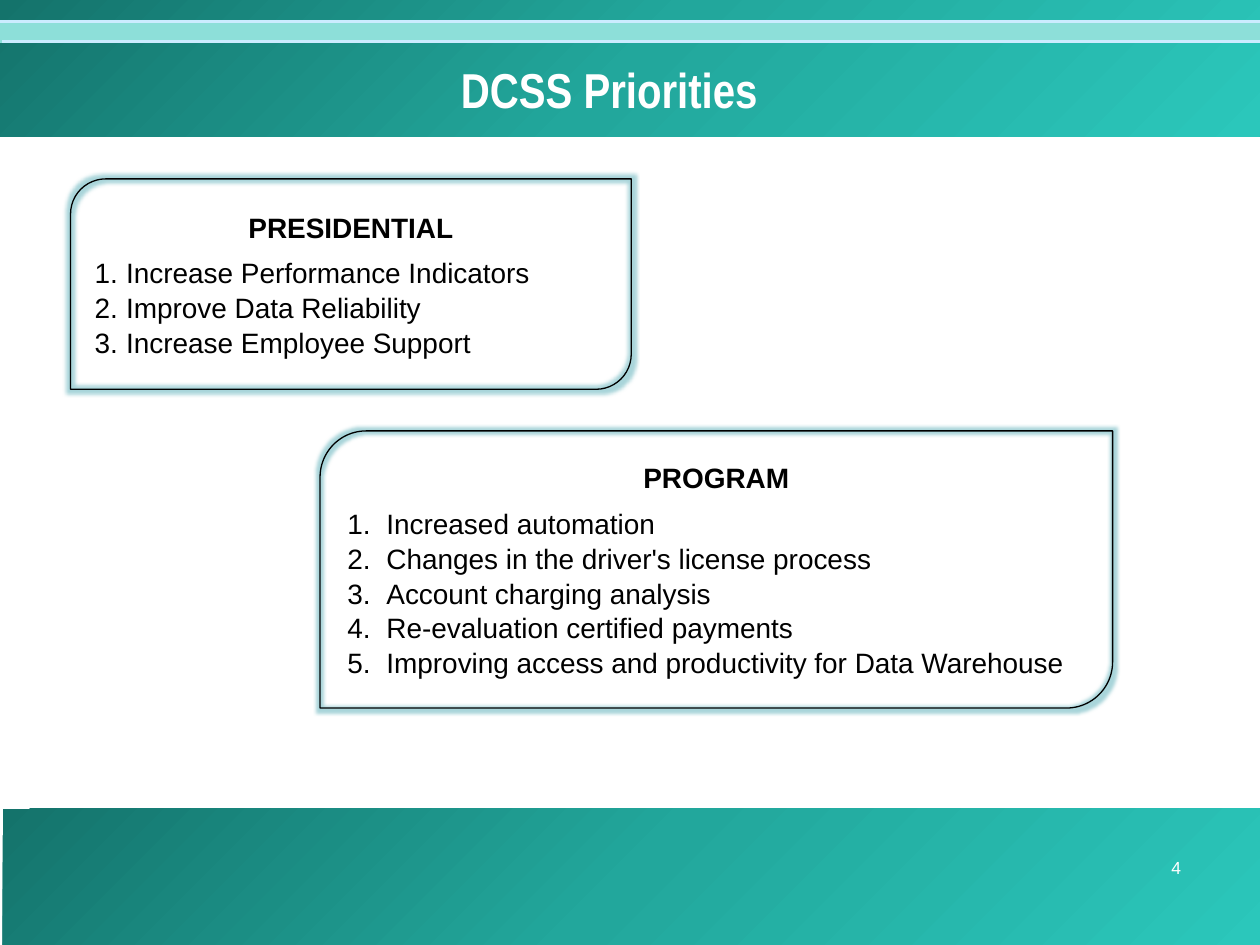
from lxml import etree
from pptx import Presentation
from pptx.dml.color import RGBColor
from pptx.enum.shapes import MSO_CONNECTOR, MSO_SHAPE
from pptx.enum.text import MSO_ANCHOR, PP_ALIGN
from pptx.oxml import parse_xml
from pptx.oxml.ns import nsdecls, qn
from pptx.util import Inches, Pt

RECT = MSO_SHAPE.RECTANGLE
CARD = MSO_SHAPE.ROUND_2_DIAG_RECTANGLE
STRAIGHT = MSO_CONNECTOR.STRAIGHT
MIDDLE, TOP = MSO_ANCHOR.MIDDLE, MSO_ANCHOR.TOP
CENTER, LEFT = PP_ALIGN.CENTER, PP_ALIGN.LEFT

DARK_TEAL = RGBColor(0x14, 0x73, 0x6B)
MID_TEAL = RGBColor(0x22, 0xA7, 0x9C)
LIGHT_TEAL = RGBColor(0x2B, 0xC7, 0xBB)
STRIPE = RGBColor(0x8D, 0xDF, 0xD9)
RULE = RGBColor(0xCC, 0xEC, 0xFF)
GLOW = RGBColor(0xA9, 0xD5, 0xDA)
WHITE = RGBColor(0xFF, 0xFF, 0xFF)
BLACK = RGBColor(0, 0, 0)


def add_run(p, text, size, color, bold=False, font="Arial"):
    r = p.add_run()
    r.text = text
    r.font.size, r.font.bold, r.font.name = Pt(size), bold, font
    r.font.color.rgb = color


def add_bar(s, x, y, w, h):
    bar = s.shapes.add_shape(RECT, Inches(x), Inches(y), Inches(w), Inches(h))
    bar.shadow.inherit = False
    bar.line.fill.background()
    return bar


def add_gradient_band(s, x, y, w, h):
    band = add_bar(s, x, y, w, h)
    fill = band.fill
    fill.gradient()
    fill.gradient_angle = 315
    stops = fill.gradient_stops
    stops[0].color.rgb, stops[1].color.rgb = DARK_TEAL, LIGHT_TEAL
    stops[0].position, stops[1].position = 0, 1
    middle = parse_xml(f'<a:gs {nsdecls("a")} pos="50000">'
                       f'<a:srgbClr val="{MID_TEAL}"/></a:gs>')
    gradient = band._element.spPr.find(qn("a:gradFill"))
    gradient.find(qn("a:gsLst")).insert(1, middle)


def add_rule(s, x1, x2, y):
    rule = s.shapes.add_connector(STRAIGHT, Inches(x1), Inches(y), Inches(x2), Inches(y))
    rule.line.color.rgb = RULE
    rule.line.width = Pt(1.5)
    etree.SubElement(rule._element.spPr, qn("a:effectLst"))


def add_label(s, x, y, w, h, text, size, anchor, **style):
    tf = s.shapes.add_textbox(Inches(x), Inches(y), Inches(w), Inches(h)).text_frame
    tf.word_wrap = True
    tf.vertical_anchor = anchor
    p = tf.paragraphs[0]
    p.alignment = CENTER
    add_run(p, text, size, WHITE, **style)


def add_priorities(s, x, y, w, h, heading, items, indent):
    """Glowing card with a heading and numbered items hanging by indent inches."""
    card = s.shapes.add_shape(CARD, Inches(x), Inches(y), Inches(w), Inches(h))
    card.shadow.inherit = False
    card.fill.background()
    card.line.color.rgb = BLACK
    card.line.width = Pt(0.75)
    glow = parse_xml(f'<a:glow {nsdecls("a")} rad="{Inches(0.06)}">'
                     f'<a:srgbClr val="{GLOW}"/></a:glow>')
    card._element.spPr.find(qn("a:effectLst")).append(glow)

    tf = card.text_frame
    tf.word_wrap = True
    tf.vertical_anchor = MIDDLE
    tf.margin_left = tf.margin_right = Inches(0.11)
    tf.margin_top = tf.margin_bottom = Inches(0.06)
    p = tf.paragraphs[0]
    p.alignment, p.space_after, p.line_spacing = CENTER, Pt(6), 1.04
    add_run(p, heading, 16, BLACK, bold=True)
    for number, item in enumerate(items, 1):
        p = tf.add_paragraph()
        p.alignment, p.line_spacing = LEFT, 1.04
        pPr = p._p.get_or_add_pPr()
        pPr.set("marL", str(Inches(indent)))
        pPr.set("indent", str(-Inches(indent)))
        add_run(p, f"{number}.\t{item}", 16, BLACK)


def add_frame(s):
    add_gradient_band(s, 0.02, 6.42, 9.98, 1.08)
    add_gradient_band(s, 0, 0, 10, 1.08)
    stripe = add_bar(s, 0, 0.17, 10, 0.17)
    stripe.fill.solid()
    stripe.fill.fore_color.rgb = STRIPE
    add_rule(s, 0, 10, 0.17)
    add_rule(s, 0.02, 10, 0.33)


def main():
    prs = Presentation()
    prs.slide_width, prs.slide_height = Inches(10), Inches(7.5)
    s = prs.slides.add_slide(prs.slide_layouts[6])
    add_frame(s)
    add_label(s, 0.5, 0.08, 8.67, 1.25, "DCSS Priorities", 28, MIDDLE,
              bold=True, font="Arial Narrow")
    add_label(s, 9, 6.75, 0.67, 0.42, "4", 10, TOP)
    add_priorities(s, 0.56, 1.42, 4.45, 1.67, "PRESIDENTIAL", [
        "Increase Performance Indicators",
        "Improve Data Reliability",
        "Increase Employee Support",
    ], indent=0.25)
    add_priorities(s, 2.54, 3.42, 6.29, 2.2, "PROGRAM", [
        "Increased automation",
        "Changes in the driver's license process",
        "Account charging analysis",
        "Re-evaluation certified payments",
        "Improving access and productivity for Data Warehouse",
    ], indent=0.31)
    prs.save("out.pptx")


if __name__ == "__main__":
    main()
